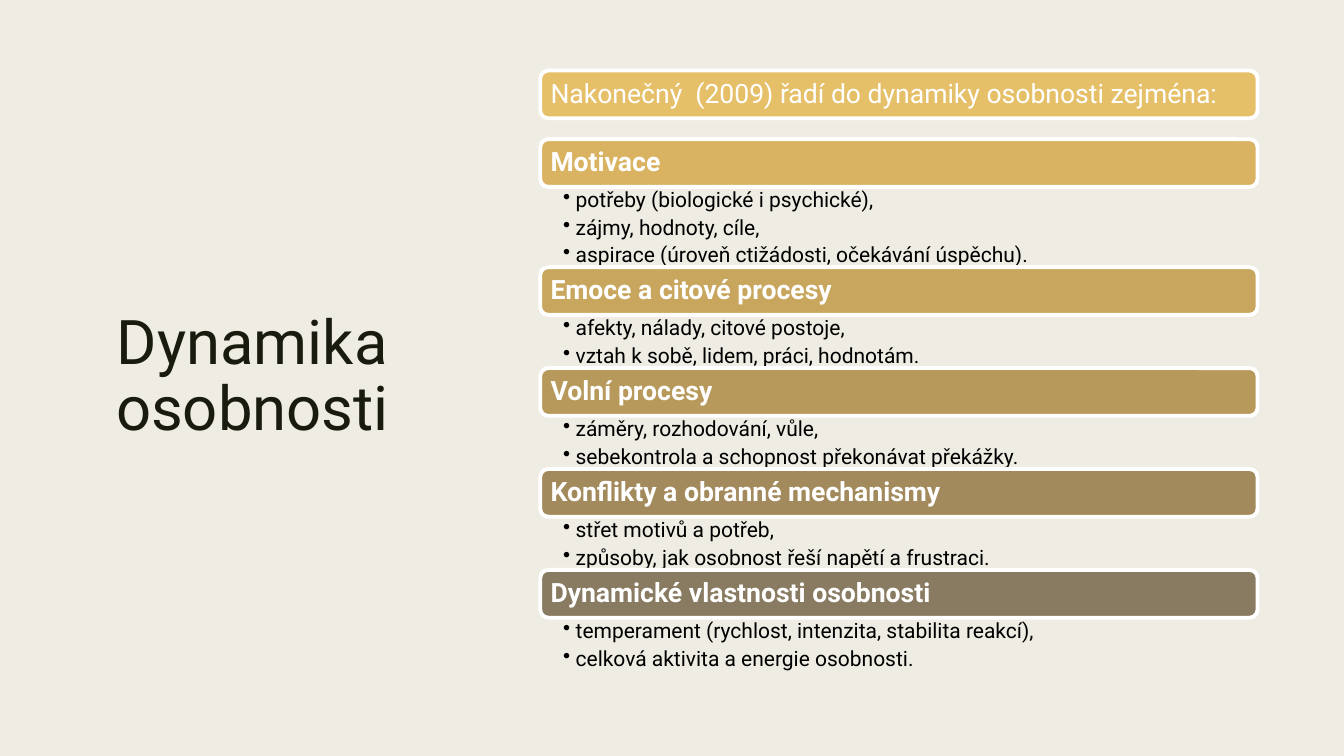
from pptx import Presentation
from pptx.dml.color import RGBColor
from pptx.enum.shapes import MSO_SHAPE
from pptx.enum.text import MSO_ANCHOR, PP_ALIGN
from pptx.oxml.xmlchemy import OxmlElement
from pptx.util import Pt

BACKGROUND = RGBColor(0xEF, 0xED, 0xE3)
INK = RGBColor(0x19, 0x1B, 0x0E)
BLACK = RGBColor(0, 0, 0)
WHITE = RGBColor(255, 255, 255)
INTRO_GOLD = RGBColor(0xE6, 0xC0, 0x69)

LEFT, WIDTH = 385.9, 512.4
INTRO_TOP, TOPICS_TOP = 50.4, 99.4
BAR_HEIGHT = 34.1
LINE_PITCH = 19.3

TOPICS = [
    ("Motivace", RGBColor(0xD9, 0xB3, 0x62),
     ["potřeby (biologické i psychické),", "zájmy, hodnoty, cíle,",
      "aspirace (úroveň ctižádosti, očekávání úspěchu)."]),
    ("Emoce a citové procesy", RGBColor(0xC9, 0xA6, 0x5E),
     ["afekty, nálady, citové postoje,",
      "vztah k sobě, lidem, práci, hodnotám."]),
    ("Volní procesy", RGBColor(0xB7, 0x99, 0x5B),
     ["záměry, rozhodování, vůle,",
      "sebekontrola a schopnost překonávat překážky."]),
    ("Konflikty a obranné mechanismy", RGBColor(0xA3, 0x8A, 0x5C),
     ["střet motivů a potřeb,",
      "způsoby, jak osobnost řeší napětí a frustraci."]),
    ("Dynamické vlastnosti osobnosti", RGBColor(0x89, 0x7B, 0x61),
     ["temperament (rychlost, intenzita, stabilita reakcí),",
      "celková aktivita a energie osobnosti."]),
]


class SlideBuilder:
    """Draw titles, bars and bullet lists in one style on a slide."""

    font_name = "Roboto"

    def __init__(self, slide):
        self.slide = slide
        slide.background.fill.solid()
        slide.background.fill.fore_color.rgb = BACKGROUND

    def frame(self, shape, text, anchor, insets):
        frame = shape.text_frame
        frame.text = text
        frame.word_wrap = True
        frame.vertical_anchor = anchor
        (frame.margin_left, frame.margin_top,
         frame.margin_right, frame.margin_bottom) = map(Pt, insets)
        return frame

    def style(self, para, size, color, bold=False, spacing=0.9,
              align=PP_ALIGN.LEFT):
        para.alignment = align
        para.line_spacing = spacing
        for span in para.runs:
            span.font.name = self.font_name
            span.font.size = Pt(size)
            span.font.bold = bold
            span.font.color.rgb = color

    def title(self, text, left, top, width, height):
        box = self.slide.shapes.add_textbox(
            Pt(left), Pt(top), Pt(width), Pt(height))
        frame = self.frame(box, text, MSO_ANCHOR.MIDDLE, (7.2, 3.6, 7.2, 3.6))
        self.style(frame.paragraphs[0], 44, INK, spacing=0.89,
                   align=PP_ALIGN.CENTER)

    def bar(self, text, top, color, bold=True):
        bar = self.slide.shapes.add_shape(
            MSO_SHAPE.ROUNDED_RECTANGLE,
            Pt(LEFT), Pt(top), Pt(WIDTH), Pt(BAR_HEIGHT))
        bar.shadow.inherit = False
        bar.fill.solid()
        bar.fill.fore_color.rgb = color
        bar.line.color.rgb = WHITE
        bar.line.width = Pt(2.75)
        frame = self.frame(bar, text, MSO_ANCHOR.MIDDLE, (5.7,) * 4)
        self.style(frame.paragraphs[0], 19, WHITE, bold)

    def bullets(self, items, top, height):
        box = self.slide.shapes.add_textbox(
            Pt(LEFT), Pt(top), Pt(WIDTH), Pt(height))
        frame = self.frame(box, "\n".join(items), MSO_ANCHOR.TOP,
                           (16.3, 1.9, 10.7, 1.9))
        for para in frame.paragraphs:
            para.level = 1
            para.space_after = Pt(3.5)
            self.style(para, 15, BLACK)
            properties = para._p.get_or_add_pPr()
            properties.set("marL", str(Pt(9)))
            properties.set("indent", str(Pt(-9)))
            bullet = OxmlElement("a:buChar")
            bullet.set("char", "•")
            properties.append(bullet)


def main():
    deck = Presentation()
    deck.slide_width, deck.slide_height = Pt(960), Pt(540)
    page = SlideBuilder(deck.slides.add_slide(deck.slide_layouts[6]))
    page.title("Dynamika osobnosti", 50.4, 50.4, 260, 439.2)
    page.bar("Nakonečný  (2009) řadí do dynamiky osobnosti zejména:",
             INTRO_TOP, INTRO_GOLD, bold=False)
    top = TOPICS_TOP
    for heading, color, items in TOPICS:
        page.bar(heading, top, color)
        list_height = LINE_PITCH * len(items) - 0.6
        page.bullets(items, top + BAR_HEIGHT, list_height)
        top += BAR_HEIGHT + list_height
    deck.save("out.pptx")


if __name__ == "__main__":
    main()
